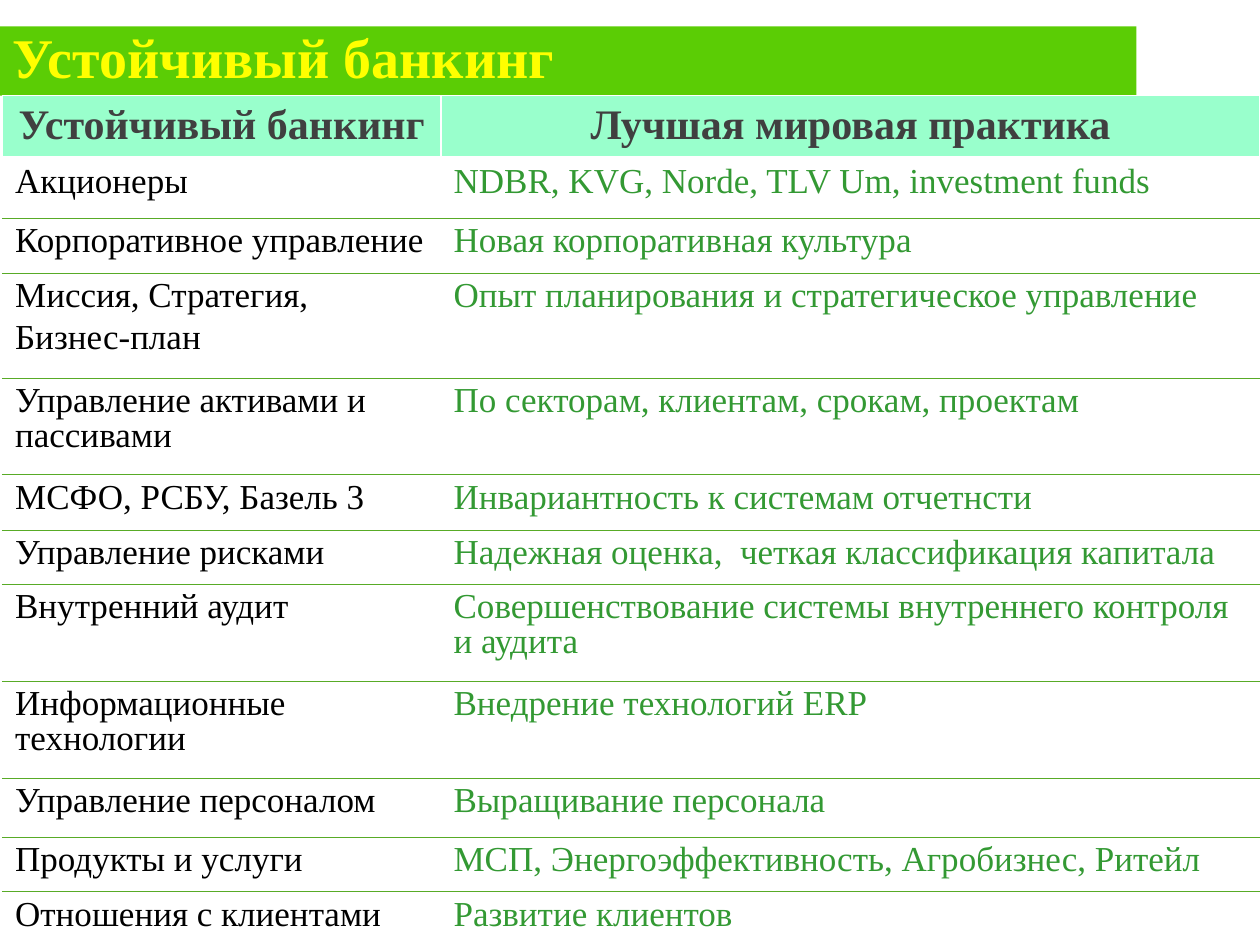
from dataclasses import dataclass

from lxml.etree import SubElement
from pptx import Presentation
from pptx.dml.color import RGBColor
from pptx.enum.shapes import MSO_SHAPE
from pptx.enum.text import MSO_ANCHOR, MSO_AUTO_SIZE, PP_ALIGN
from pptx.oxml.ns import qn
from pptx.util import Inches, Pt


@dataclass(frozen=True)
class Theme:
    font: str = "Times New Roman"
    bar: str = "5BCD05"
    title: str = "FFFF00"
    header_fill: str = "99FFCC"
    header: str = "404040"
    topic: str = "000000"
    practice: str = "339933"
    rule: str = "58AB26"
    white: str = "FFFFFF"
    title_size: int = 32
    header_size: int = 24
    body_size: int = 20
    space_ratio: float = 0.2
    line_spacing: float = 0.9


@dataclass(frozen=True)
class Row:
    height: float
    topic: str
    practice: str


@dataclass(frozen=True)
class Border:
    color: str
    width: float


THEME = Theme()
HEADING = "Устойчивый банкинг"
COLUMN_WIDTHS = (3.48, 6.5)
ROWS = (
    Row(0.5, HEADING, "Лучшая мировая практика"),
    Row(0.47, "Акционеры", "NDBR, KVG, Norde, TLV Um, investment funds"),
    Row(0.44, "Корпоративное управление", "Новая корпоративная культура"),
    Row(0.83, "Миссия, Стратегия,\nБизнес-план",
        "Опыт планирования и стратегическое управление"),
    Row(0.77, "Управление активами и пассивами",
        "По секторам, клиентам, срокам, проектам"),
    Row(0.44, "МСФО, РСБУ, Базель 3", "Инвариантность к системам отчетнсти"),
    Row(0.43, "Управление рисками",
        "Надежная оценка,  четкая классификация капитала"),
    Row(0.77, "Внутренний аудит",
        "Совершенствование системы внутреннего контроля и аудита"),
    Row(0.77, "Информационные технологии", "Внедрение технологий ERP"),
    Row(0.47, "Управление персоналом", "Выращивание персонала"),
    Row(0.43, "Продукты и услуги",
        "МСП, Энергоэффективность, Агробизнес, Ритейл"),
    Row(0.43, "Отношения с клиентами", "Развитие клиентов"),
)
THIN_WHITE = Border(THEME.white, 1)
THICK_WHITE = Border(THEME.white, 3)
GREEN_RULE = Border(THEME.rule, 0.5)


def style_runs(paragraph, size: int, color: str, bold: bool) -> None:
    for run in paragraph.runs:
        run.font.name = THEME.font
        run.font.size = Pt(size)
        run.font.bold = bold
        run.font.color.rgb = RGBColor.from_string(color)


def set_borders(cell, top: Border, bottom: Border) -> None:
    properties = cell._tc.get_or_add_tcPr()
    sides = {"L": THIN_WHITE, "R": THIN_WHITE, "T": top, "B": bottom}
    for index, (side, border) in enumerate(sides.items()):
        line = properties.makeelement(qn(f"a:ln{side}"), {"w": str(Pt(border.width))})
        properties.insert(index, line)
        fill = SubElement(line, qn("a:solidFill"))
        SubElement(fill, qn("a:srgbClr"), val=border.color)


def fill_cell(cell, text: str, color: str, is_header: bool) -> None:
    cell.text_frame.text = text
    size = THEME.header_size if is_header else THEME.body_size
    for paragraph in cell.text_frame.paragraphs:
        paragraph.space_before = Pt(size * THEME.space_ratio)
        paragraph.alignment = PP_ALIGN.CENTER if is_header else PP_ALIGN.LEFT
        if not is_header:
            paragraph.line_spacing = THEME.line_spacing
        style_runs(paragraph, size, color, is_header)
    if is_header:
        cell.fill.solid()
        cell.fill.fore_color.rgb = RGBColor.from_string(THEME.header_fill)
    else:
        cell.fill.background()


def add_practice_table(slide) -> None:
    height = sum(row.height for row in ROWS)
    table = slide.shapes.add_table(
        len(ROWS), len(COLUMN_WIDTHS), Inches(0.02), Inches(0.76),
        Inches(sum(COLUMN_WIDTHS)), Inches(height)).table
    table.horz_banding = False
    for column, width in zip(table.columns, COLUMN_WIDTHS):
        column.width = Inches(width)
    for index, row in enumerate(ROWS):
        table.rows[index].height = Inches(row.height)
        is_header = index == 0
        colors = (THEME.header,) * 2 if is_header else (THEME.topic, THEME.practice)
        top = (THIN_WHITE, THICK_WHITE)[index] if index < 2 else GREEN_RULE
        bottom = THICK_WHITE if is_header else GREEN_RULE
        for position, text in enumerate((row.topic, row.practice)):
            cell = table.cell(index, position)
            fill_cell(cell, text, colors[position], is_header)
            set_borders(cell, top, bottom)


def add_title_bar(slide) -> None:
    bar = slide.shapes.add_shape(
        MSO_SHAPE.RECTANGLE, 0, Inches(0.21), Inches(9.02), Inches(0.55))
    bar.shadow.inherit = False
    bar.fill.solid()
    bar.fill.fore_color.rgb = RGBColor.from_string(THEME.bar)
    bar.line.fill.background()


def place_title(slide) -> None:
    title = slide.shapes.title
    title.left, title.top = 0, Inches(0.21)
    title.width, title.height = Inches(8.05), Inches(0.47)
    frame = title.text_frame
    frame.text = HEADING
    frame.auto_size = MSO_AUTO_SIZE.NONE
    frame.vertical_anchor = MSO_ANCHOR.MIDDLE
    frame.paragraphs[0].alignment = PP_ALIGN.LEFT
    style_runs(frame.paragraphs[0], THEME.title_size, THEME.title, True)
    title._element.getparent().append(title._element)


def main() -> None:
    presentation = Presentation()
    presentation.slide_width = Inches(10)
    presentation.slide_height = Inches(7.5)
    slide = presentation.slides.add_slide(presentation.slide_layouts[5])
    add_title_bar(slide)
    add_practice_table(slide)
    place_title(slide)
    presentation.save("out.pptx")


if __name__ == "__main__":
    main()
